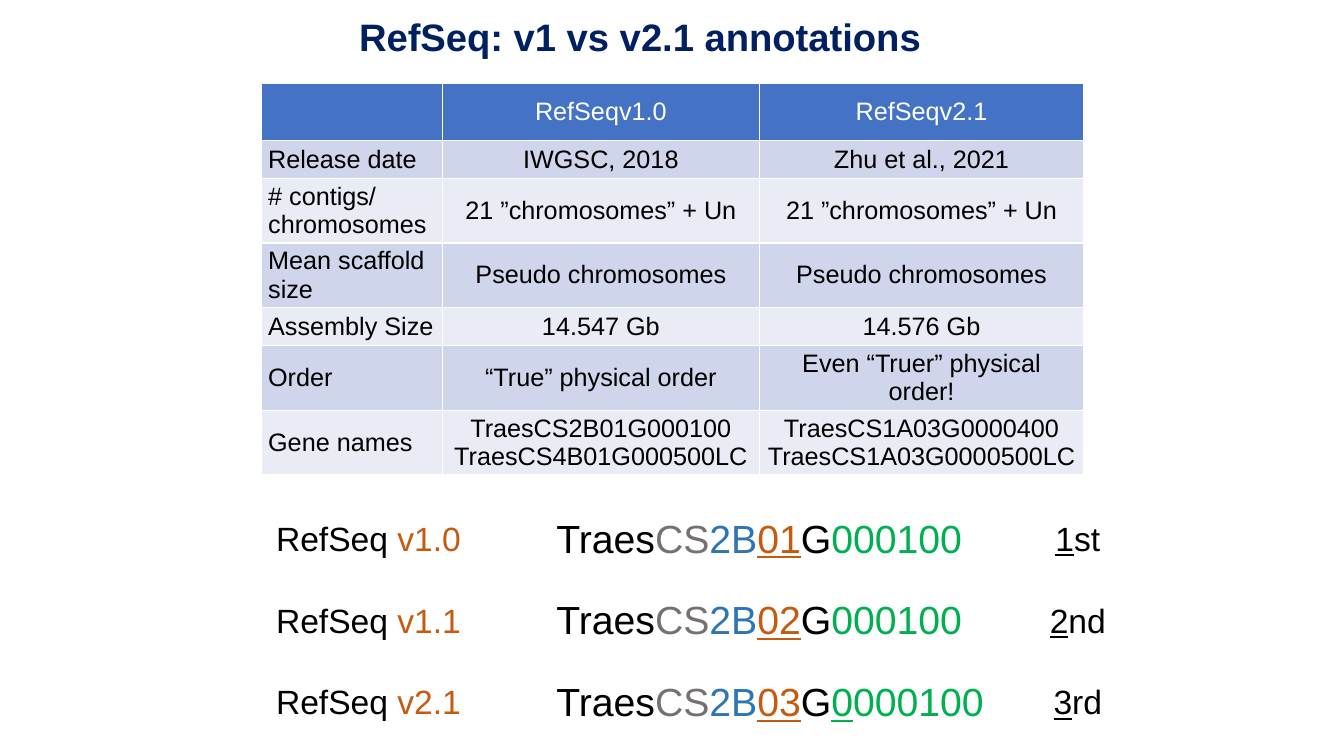
from dataclasses import dataclass

from pptx import Presentation
from pptx.dml.color import RGBColor
from pptx.enum.text import MSO_ANCHOR as Anchor, MSO_AUTO_SIZE as Fit, PP_ALIGN as Align
from pptx.slide import Slide
from pptx.text.text import TextFrame
from pptx.util import Inches, Length, Pt

WIDTH, HEIGHT = Inches(13.33), Inches(7.5)
FONT = "Arial"
COLORS = {
    "navy": "002060", "head": "4472C4", "odd": "CFD5EA", "even": "E9EBF5",
    "white": "FFFFFF", "black": "000000", "gray": "767171", "blue": "2E75B6",
    "orange": "C55A11", "green": "00B050",
}


@dataclass(frozen=True)
class Box:
    """Place and size on a grid of 100 columns by 100 rows."""
    left: float
    top: float
    width: float
    height: float


@dataclass(frozen=True)
class Part:
    text: str
    color: str = "black"
    under: bool = False


@dataclass(frozen=True)
class Release:
    version: str
    code: str
    genes: tuple[Part, ...]
    rank: str
    suffix: str
    width: float


TITLE = Box(25.96, 2.13, 48.09, 6.4)
TABLE_LEFT, TABLE_TOP = 19.43, 11.07
COL_SIZES = (13.5, 23.56, 24.16)
ROW_SIZES = (7.47, 5.07, 8.53, 8.53, 5.07, 8.53, 8.53)
CELLS = (
    ("", "RefSeqv1.0", "RefSeqv2.1"),
    ("Release date", "IWGSC, 2018", "Zhu et al., 2021"),
    ("# contigs/ chromosomes", "21 ”chromosomes” + Un", "21 ”chromosomes” + Un"),
    ("Mean scaffold size", "Pseudo chromosomes", "Pseudo chromosomes"),
    ("Assembly Size", "14.547 Gb", "14.576 Gb"),
    ("Order", "“True” physical order", "Even “Truer” physical order!"),
    ("Gene names", "TraesCS2B01G000100\nTraesCS4B01G000500LC",
     "TraesCS1A03G0000400\nTraesCS1A03G0000500LC"),
)

GENE = Part("000100", "green")
RELEASES = (
    Release("v1.0", "01", (GENE,), "1", "st", 31.88),
    Release("v1.1", "02", (GENE,), "2", "nd", 31.88),
    Release("v2.1", "03", (Part("0", "green", True), GENE), "3", "rd", 36.68),
)
NAME_TOP, LABEL_TOP, STEP = 67.33, 67.87, 10.8


def rgb(name: str) -> RGBColor:
    return RGBColor.from_string(COLORS[name])


def col(count: float) -> Length:
    return Length(round(WIDTH * count / 100))


def row(count: float) -> Length:
    return Length(round(HEIGHT * count / 100))


def place(box: Box) -> tuple[Length, Length, Length, Length]:
    return col(box.left), row(box.top), col(box.width), row(box.height)


def style(frame: TextFrame, size: float, align: Align, color: str = "black",
          bold: bool = False) -> None:
    for para in frame.paragraphs:
        para.alignment = align
        para.font.name, para.font.size, para.font.bold = FONT, Pt(size), bold
        para.font.color.rgb = rgb(color)


def add_title(slide: Slide) -> None:
    title = slide.shapes.title
    title.left, title.top, title.width, title.height = place(TITLE)
    frame = title.text_frame
    frame.text = "RefSeq: v1 vs v2.1 annotations"
    frame.auto_size, frame.vertical_anchor = Fit.NONE, Anchor.MIDDLE
    style(frame, 27.3, Align.LEFT, "navy", True)
    frame.paragraphs[0].line_spacing = 0.8


def add_grid(slide: Slide) -> None:
    """Draw the table that compares the two assemblies."""
    box = Box(TABLE_LEFT, TABLE_TOP, sum(COL_SIZES), sum(ROW_SIZES))
    table = slide.shapes.add_table(len(CELLS), len(COL_SIZES), *place(box)).table
    for column, size in zip(table.columns, COL_SIZES):
        column.width = col(size)
    for r, (texts, size) in enumerate(zip(CELLS, ROW_SIZES)):
        table.rows[r].height = row(size)
        fill = "head" if r == 0 else "odd" if r % 2 else "even"
        for c, text in enumerate(texts):
            cell = table.cell(r, c)
            cell.fill.solid()
            cell.fill.fore_color.rgb = rgb(fill)
            cell.vertical_anchor = Anchor.MIDDLE
            cell.margin_left = cell.margin_right = Inches(0.07)
            cell.margin_top = cell.margin_bottom = Inches(0.04)
            cell.text = text
            style(cell.text_frame, 18, Align.CENTER if c else Align.LEFT,
                  "black" if r else "white")


def add_parts(slide: Slide, box: Box, parts: tuple[Part, ...], size: float,
              align: Align) -> None:
    frame = slide.shapes.add_textbox(*place(box)).text_frame
    frame.word_wrap, frame.auto_size = True, Fit.SHAPE_TO_FIT_TEXT
    style(frame, size, align)
    for part in parts:
        run = frame.paragraphs[0].add_run()
        run.text = part.text
        run.font.color.rgb = rgb(part.color)
        run.font.underline = part.under


def add_release(slide: Slide, item: Release, index: int) -> None:
    shift = index * STEP
    label = (Part("RefSeq"), Part(f" {item.version}", "orange"))
    name = (Part("Traes"), Part("CS", "gray"), Part("2B", "blue"),
            Part(item.code, "orange", True), Part("G"), *item.genes)
    rank = (Part(item.rank, under=True), Part(item.suffix))
    top = LABEL_TOP + shift
    add_parts(slide, Box(17.1, top, 20.63, 6.67), label, 24, Align.CENTER)
    add_parts(slide, Box(40.66, NAME_TOP + shift, item.width, 7.6), name, 28, Align.LEFT)
    add_parts(slide, Box(76.07, top, 8.25, 6.67), rank, 24, Align.CENTER)


def main() -> None:
    deck = Presentation()
    deck.slide_width, deck.slide_height = WIDTH, HEIGHT
    slide = deck.slides.add_slide(deck.slide_layouts[5])
    add_title(slide)
    add_grid(slide)
    for index, item in enumerate(RELEASES):
        add_release(slide, item, index)
    deck.save("out.pptx")


if __name__ == "__main__":
    main()
